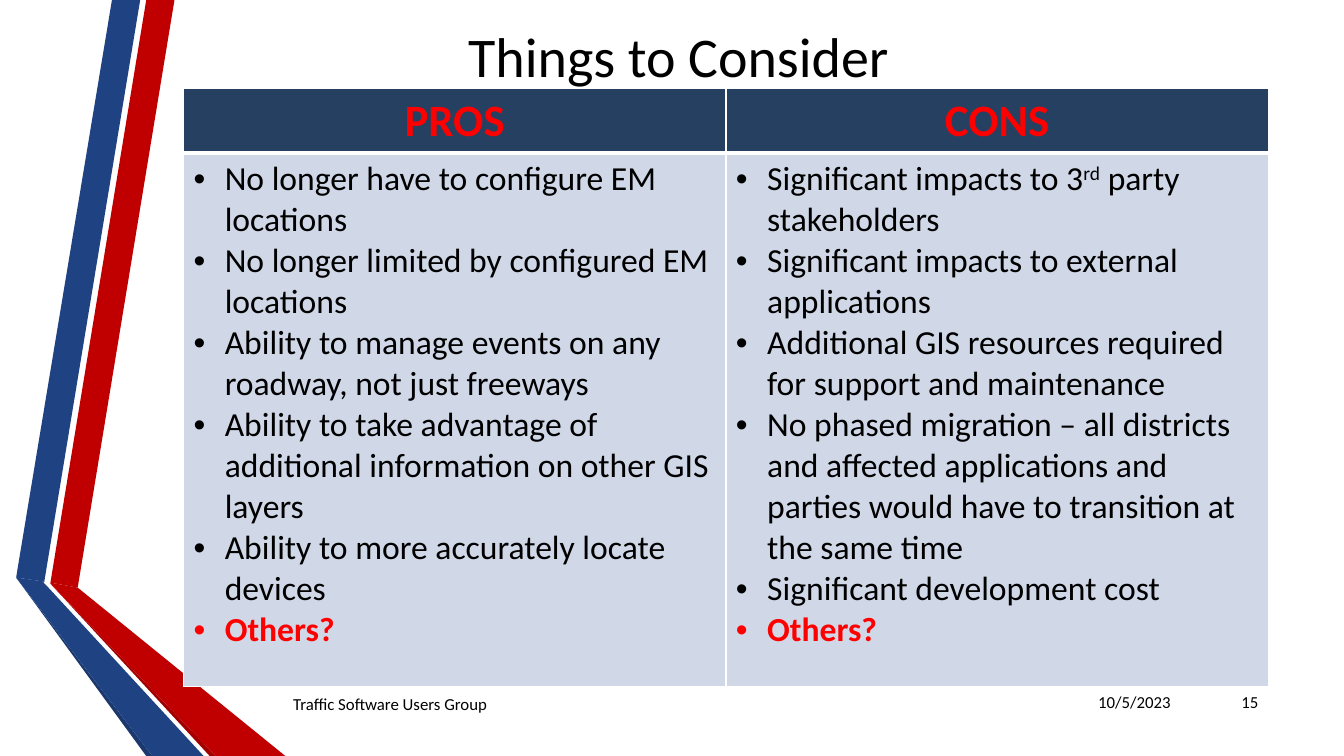
from lxml.etree import SubElement
from pptx import Presentation
from pptx.dml.color import RGBColor
from pptx.enum.text import MSO_ANCHOR as Anchor, MSO_AUTO_SIZE as AutoSize, PP_ALIGN as Align
from pptx.oxml.ns import qn
from pptx.util import Inches, Pt

WIDTH, HEIGHT = Inches(13.33), Inches(7.5)
FONT = "Calibri"
BLACK, WHITE, RED = "000000", "FFFFFF", "FF0000"
NAVY, PALE = "254061", "D0D8E8"
CRIMSON, DARK_CRIMSON, BLUE, DARK_BLUE = "C00000", "A40000", "1F4283", "1B396F"

RIBBONS = [
    (CRIMSON, [(3.75, 77.07), (5.78, 77.73), (12.98, 0), (10.88, 0)]),
    (BLUE, [(10.43, 0), (8.33, 0), (1.2, 76.4), (3.3, 76.93)]),
    (DARK_BLUE, [(1.2, 76.4), (10.88, 100), (11.33, 100)]),
    (DARK_CRIMSON, [(3.75, 77.2), (15.6, 100), (16.05, 100)]),
    (CRIMSON, [(3.75, 77.2), (16.05, 100), (21.23, 100), (5.78, 77.73), (3.75, 77.07)]),
    (BLUE, [(15.15, 100), (3.6, 77.73), (3.23, 77.07), (3.3, 76.93), (1.2, 76.4), (11.33, 100)]),
]

ARGUMENTS = {
    "PROS": [
        "No longer have to configure EM locations",
        "No longer limited by configured EM locations",
        "Ability to manage events on any roadway, not just freeways",
        "Ability to take advantage of additional information on other GIS layers",
        "Ability to more accurately locate devices",
    ],
    "CONS": [
        "Significant impacts to 3^rd^ party stakeholders",
        "Significant impacts to external applications",
        "Additional GIS resources required for support and maintenance",
        "No phased migration – all districts and affected applications and parties "
        "would have to transition at the same time",
        "Significant development cost",
    ],
}
OPEN_QUESTION = "Others?"


def across(share):
    """Turn a percentage of the slide width into a length."""
    return round(WIDTH * share / 100)


def down(share):
    """Turn a percentage of the slide height into a length."""
    return round(HEIGHT * share / 100)


def area(left, top, width, height):
    """Turn four percentages into a position and size."""
    return across(left), down(top), across(width), down(height)


def colour(hex_code):
    """Turn a hex string into a colour."""
    return RGBColor.from_string(hex_code)


def add_bullet(paragraph):
    """Give a paragraph a hanging round bullet."""
    properties = paragraph._p.get_or_add_pPr()
    properties.set("marL", str(Inches(0.31)))
    properties.set("indent", str(-Inches(0.31)))
    SubElement(properties, qn("a:buFont"), typeface="Arial")
    SubElement(properties, qn("a:buChar"), char="•")


def write(paragraph, text, size=24, ink=BLACK, bold=False, align=Align.LEFT, bullet=False):
    """Write formatted text, raising the parts between carets."""
    if bullet:
        add_bullet(paragraph)
    paragraph.alignment = align
    for index, part in enumerate(text.split("^")):
        run = paragraph.add_run()
        run.text = part
        run.font.name, run.font.size, run.font.bold = FONT, Pt(size), bold
        run.font.color.rgb = colour(ink)
        if index % 2:
            run.font._element.set("baseline", "30000")


def add_ribbon(slide, fill, points):
    """Draw one filled ribbon facet through the given points."""
    corners = [(across(x), down(y)) for x, y in points]
    builder = slide.shapes.build_freeform(*corners[0], scale=1.0)
    builder.add_line_segments(corners[1:], close=True)
    facet = builder.convert_to_shape()
    facet.shadow.inherit = False
    facet.fill.solid()
    facet.fill.fore_color.rgb = colour(fill)
    facet.line.fill.background()


def add_title(slide, text):
    """Place and fill the title placeholder."""
    title = slide.shapes.title
    title.left, title.top, title.width, title.height = area(21.15, 2.13, 58.66, 10.27)
    frame = title.text_frame
    frame.auto_size, frame.vertical_anchor = AutoSize.NONE, Anchor.TOP
    write(frame.paragraphs[0], text, size=40, align=Align.CENTER)


def add_footer(slide, text, place, align=Align.LEFT):
    """Add one small text at the foot of the slide."""
    frame = slide.shapes.add_textbox(*area(*place)).text_frame
    frame.word_wrap, frame.vertical_anchor = True, Anchor.MIDDLE
    write(frame.paragraphs[0], text, size=12, align=align)


def format_cell(cell, fill, **widths):
    """Give a cell white borders and a plain fill."""
    properties = cell._tc.get_or_add_tcPr()
    for side in "LRTB":
        border = SubElement(properties, qn(f"a:ln{side}"), w=str(Pt(widths.get(side, 1))))
        SubElement(SubElement(border, qn("a:solidFill")), qn("a:srgbClr"), val=WHITE)
    cell.fill.solid()
    cell.fill.fore_color.rgb = colour(fill)


def add_comparison(slide, arguments):
    """Add the table with one headed column per side of the argument."""
    row_shares = 8.53, 70.53
    place = area(13.65, 11.73, 80.72, sum(row_shares))
    table = slide.shapes.add_table(len(row_shares), len(arguments), *place).table
    for row, share in zip(table.rows, row_shares):
        row.height = down(share)
    for column, (heading, points) in enumerate(arguments.items()):
        header, body = table.cell(0, column), table.cell(1, column)
        format_cell(header, NAVY, B=3)
        format_cell(body, PALE, T=3)
        write(header.text_frame.paragraphs[0], heading, size=32, ink=RED, bold=True,
              align=Align.CENTER)
        frame = body.text_frame
        for index, point in enumerate(points):
            paragraph = frame.add_paragraph() if index else frame.paragraphs[0]
            write(paragraph, point, bullet=True)
        write(frame.add_paragraph(), OPEN_QUESTION, ink=RED, bold=True, bullet=True)


def main():
    """Build and save the slide."""
    deck = Presentation()
    deck.slide_width, deck.slide_height = WIDTH, HEIGHT
    slide = deck.slides.add_slide(deck.slide_layouts[5])
    for fill, points in RIBBONS:
        add_ribbon(slide, fill, points)
    add_footer(slide, "Traffic Software Users Group", (21.08, 90.4, 58.14, 5.33))
    add_footer(slide, "15", (89.87, 90.13, 4.5, 5.33), align=Align.RIGHT)
    add_title(slide, "Things to Consider")
    add_comparison(slide, ARGUMENTS)
    add_footer(slide, "10/5/2023", (78.47, 90.13, 9.38, 5.33), align=Align.RIGHT)
    deck.save("out.pptx")


if __name__ == "__main__":
    main()
